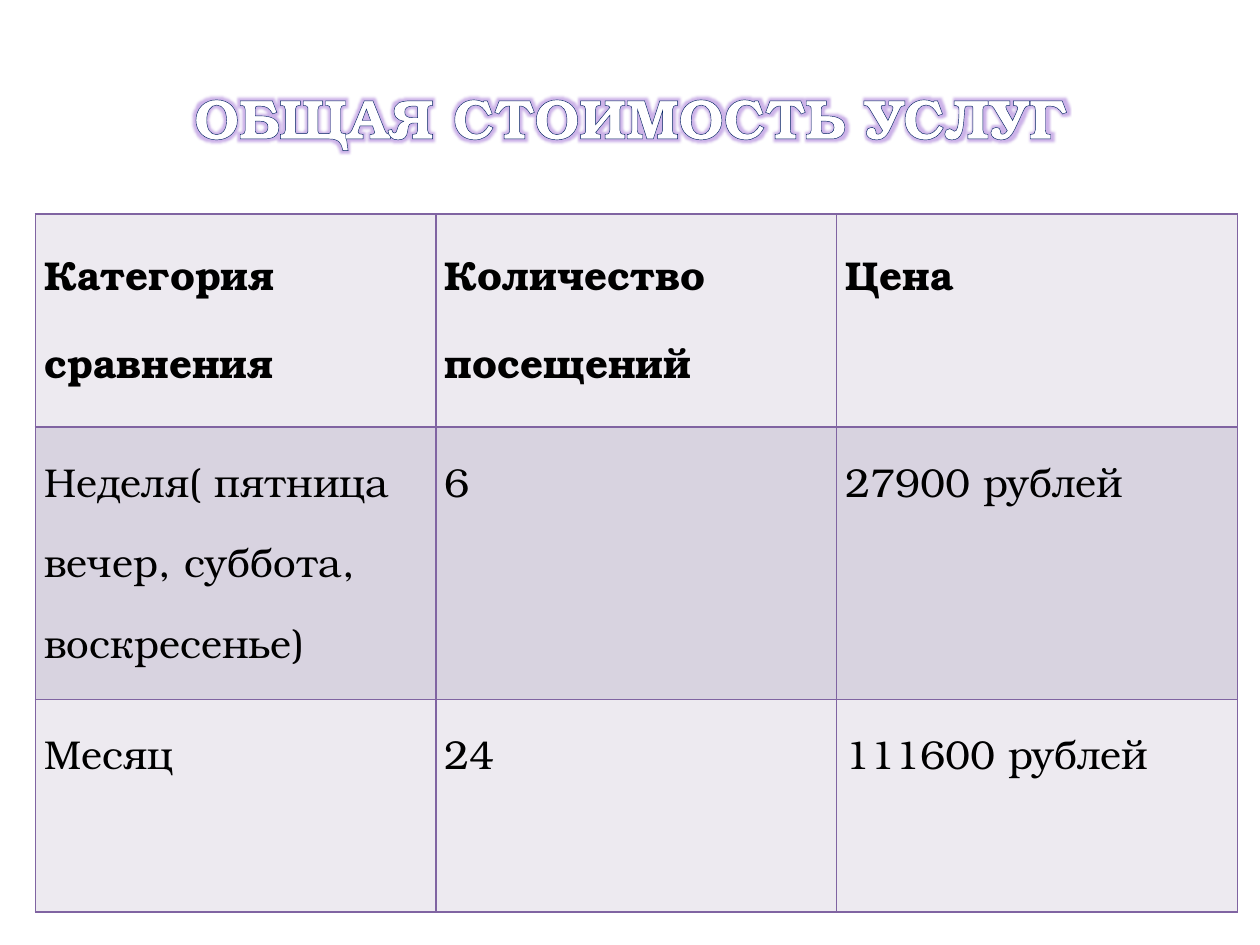
from dataclasses import dataclass

from lxml.etree import SubElement
from pptx import Presentation
from pptx.dml.color import RGBColor
from pptx.enum.text import MSO_ANCHOR, PP_ALIGN
from pptx.oxml import parse_xml
from pptx.oxml.ns import nsdecls, qn
from pptx.util import Inches, Pt


@dataclass(frozen=True)
class Theme:
    font: str = "TeX Gyre Bonum"
    title_size: int = 32
    table_size: int = 23
    title_color: str = "FFFFFF"
    title_outline: str = "002060"
    title_glow: str = "8040C6"
    text_color: str = "000000"
    border: str = "8064A2"
    row_fills: tuple = ("EDEAF0", "D8D3E0")


THEME = Theme()

TITLE = "ОБЩАЯ СТОИМОСТЬ УСЛУГ"
PRICES = [
    ("Категория сравнения", "Количество посещений", "Цена"),
    ("Неделя( пятница вечер, суббота, воскресенье)", "6", "27900 рублей"),
    ("Месяц", "24", "111600 рублей"),
]
COLUMN_WIDTH = 3.18
ROW_HEIGHTS = (1.69, 2.16, 1.69)


def apply_format(target, settings):
    for attribute, value in settings.items():
        setattr(target, attribute, value)


def add_run(paragraph, text, size, color, bold):
    run = paragraph.add_run()
    run.text = text
    apply_format(run.font, {"name": THEME.font, "size": Pt(size), "bold": bold})
    run.font.color.rgb = RGBColor.from_string(color)
    return run


def line_xml(tag, color, points):
    return parse_xml(
        f'<a:{tag} {nsdecls("a")} w="{Pt(points)}"><a:solidFill>'
        f'<a:srgbClr val="{color}"/></a:solidFill></a:{tag}>'
    )


def add_outline_and_glow(run):
    properties = run.font._element
    properties.insert(0, line_xml("ln", THEME.title_outline, 1.5))
    glow = parse_xml(
        f'<a:effectLst {nsdecls("a")}><a:glow rad="{Pt(8)}">'
        f'<a:srgbClr val="{THEME.title_glow}"><a:alpha val="40000"/></a:srgbClr>'
        "</a:glow></a:effectLst>"
    )
    properties.find(qn("a:solidFill")).addnext(glow)


def add_title(slide):
    box = slide.shapes.add_textbox(Inches(0.5), Inches(0.3), Inches(9), Inches(1.25))
    frame = box.text_frame
    apply_format(frame, {"word_wrap": True, "vertical_anchor": MSO_ANCHOR.MIDDLE})
    heading = frame.paragraphs[0]
    heading.alignment = PP_ALIGN.CENTER
    run = add_run(heading, TITLE, THEME.title_size, THEME.title_color, True)
    add_outline_and_glow(run)


def fill_cell(cell, text, fill, bold):
    apply_format(cell, {
        "margin_left": Inches(0.07),
        "margin_right": Inches(0.07),
        "margin_top": 0,
        "margin_bottom": 0,
    })
    cell.fill.solid()
    cell.fill.fore_color.rgb = RGBColor.from_string(fill)
    paragraph = cell.text_frame.paragraphs[0]
    paragraph.line_spacing = 1.5
    add_run(paragraph, text, THEME.table_size, THEME.text_color, bold)
    # Borders come before the fill in the cell properties
    properties = cell._tc.get_or_add_tcPr()
    for index, side in enumerate(("lnL", "lnR", "lnT", "lnB")):
        properties.insert(index, line_xml(side, THEME.border, 1))


def add_price_table(slide):
    column_count = len(PRICES[0])
    table = slide.shapes.add_table(
        len(PRICES), column_count, Inches(0.28), Inches(1.7),
        Inches(COLUMN_WIDTH * column_count), Inches(sum(ROW_HEIGHTS)),
    ).table
    for column in table.columns:
        column.width = Inches(COLUMN_WIDTH)
    for row_index, (values, height) in enumerate(zip(PRICES, ROW_HEIGHTS)):
        table.rows[row_index].height = Inches(height)
        fill = THEME.row_fills[row_index % 2]
        for column_index, value in enumerate(values):
            fill_cell(table.cell(row_index, column_index), value, fill, row_index == 0)


def main():
    deck = Presentation()
    apply_format(deck, {"slide_width": Inches(10), "slide_height": Inches(7.5)})
    slide = deck.slides.add_slide(deck.slide_layouts[6])

    # Heading with outlined, glowing letters
    add_title(slide)
    # Prices by period
    add_price_table(slide)

    deck.save("out.pptx")


if __name__ == "__main__":
    main()
